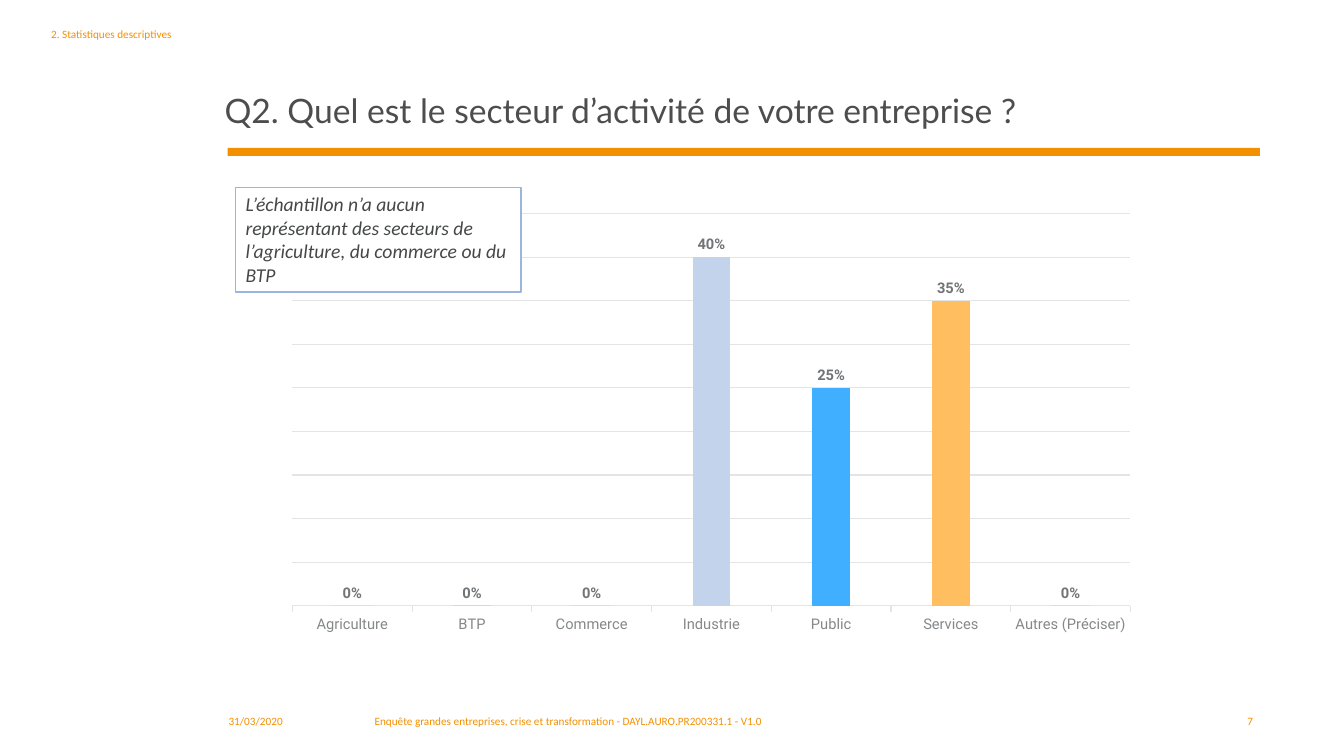
from pptx import Presentation
from pptx.chart.data import CategoryChartData
from pptx.dml.color import RGBColor
from pptx.enum.chart import XL_CHART_TYPE, XL_LABEL_POSITION, XL_TICK_LABEL_POSITION, XL_TICK_MARK
from pptx.enum.shapes import MSO_SHAPE
from pptx.enum.text import MSO_ANCHOR, PP_ALIGN
from pptx.util import Cm, Pt

ORANGE = RGBColor(0xF3, 0x90, 0x00)
DARK = RGBColor(0x4D, 0x4D, 0x4D)
INK = RGBColor(0x45, 0x47, 0x48)
WHITE = RGBColor(0xFF, 0xFF, 0xFF)
EDGE = RGBColor(0x9B, 0xB5, 0xDF)
GRID = RGBColor(0xE3, 0xE4, 0xE4)
AXIS = RGBColor(0x85, 0x88, 0x8A)
LABEL = RGBColor(0x72, 0x75, 0x77)

# Sector, share and bar colour
SECTORS = [
    ("Agriculture", 0, RGBColor(0x93, 0xCD, 0xDD)),
    ("BTP", 0, RGBColor(0x80, 0x80, 0x80)),
    ("Commerce", 0, RGBColor(0xD9, 0x96, 0x94)),
    ("Industrie", 0.4, RGBColor(0xC3, 0xD3, 0xEC)),
    ("Public", 0.25, RGBColor(0x40, 0xAF, 0xFF)),
    ("Services", 0.35, RGBColor(0xFF, 0xBE, 0x5F)),
    ("Autres (Préciser)", 0, ORANGE),
]

SMALL = {"name": "Calibri", "size": Pt(8), "color": ORANGE}
HEAD = {"name": "Lato", "size": Pt(24), "color": DARK}
NOTE = {"name": "Calibri", "size": Pt(14), "italic": True, "color": INK}
BASE = {"name": "Roboto", "size": Pt(10), "color": INK}
TICK = {"name": "Roboto", "size": Pt(10.5), "color": AXIS}
VALUE = {"name": "Roboto", "size": Pt(10.5), "bold": True, "color": LABEL}


def style(font, look):
    for key, val in look.items():
        if key == "color":
            font.color.rgb = val
        else:
            setattr(font, key, val)


def write(shape, text, look, align=PP_ALIGN.LEFT, anchor=MSO_ANCHOR.TOP):
    frame = shape.text_frame
    frame.word_wrap = True
    frame.vertical_anchor = anchor
    para = frame.paragraphs[0]
    para.alignment = align
    run = para.add_run()
    run.text = text
    style(run.font, look)
    return para


def add_text(slide, box, text, look, **place):
    shape = slide.shapes.add_textbox(*map(Cm, box))
    return write(shape, text, look, **place)


def add_rect(slide, box, fill):
    rect = slide.shapes.add_shape(MSO_SHAPE.RECTANGLE, *map(Cm, box))
    rect.shadow.inherit = False
    rect.fill.solid()
    rect.fill.fore_color.rgb = fill
    rect.line.fill.background()
    return rect


def add_header(slide, box):
    left, top, width, height = box
    # Section name beside the title
    add_text(slide, (left, top, 4.29, height), "2. Statistiques descriptives", SMALL)
    # Title above its rule
    inset = 4.37
    para = add_text(slide, (left + inset, top, width - inset, 2.87),
                    "Q2. Quel est le secteur d’activité de votre entreprise ?",
                    HEAD, anchor=MSO_ANCHOR.BOTTOM)
    para.line_spacing = 0.9
    add_rect(slide, (left + 4.7, top + 3.17, 26.01, 0.2), ORANGE)


def add_chart(slide, box):
    names, shares, fills = zip(*SECTORS)
    data = CategoryChartData(number_format="0%")
    data.categories = names
    data.add_series("Series 1", shares)
    chart = slide.shapes.add_chart(
        XL_CHART_TYPE.COLUMN_CLUSTERED, *map(Cm, box), data).chart
    chart.has_legend = False
    chart.has_title = False
    style(chart.font, BASE)

    # Axes
    cat = chart.category_axis
    cat.major_tick_mark = XL_TICK_MARK.OUTSIDE
    cat.tick_label_position = XL_TICK_LABEL_POSITION.LOW
    style(cat.tick_labels.font, TICK)
    val = chart.value_axis
    val.visible = False
    val.minimum_scale, val.maximum_scale, val.major_unit = 0, 0.45, 0.05
    val.has_major_gridlines = True
    for line in (cat.format.line, val.major_gridlines.format.line):
        line.color.rgb = GRID
        line.width = Pt(0.75)

    # Bars
    plot = chart.plots[0]
    plot.vary_by_categories = False
    plot.gap_width, plot.overlap = 219, -27
    bars = plot.series[0]
    bars.format.fill.solid()
    bars.format.fill.fore_color.rgb = ORANGE
    for i, color in enumerate(fills):
        fill = bars.points[i].format.fill
        fill.solid()
        fill.fore_color.rgb = color

    # Bar labels
    tags = bars.data_labels
    tags.show_value = True
    tags.position = XL_LABEL_POSITION.OUTSIDE_END
    tags.number_format = "0%"
    tags.number_format_is_linked = False
    style(tags.font, VALUE)


def add_note(slide, box):
    note = add_rect(slide, box, WHITE)
    note.line.color.rgb = EDGE
    note.line.width = Pt(1)
    write(note, "L’échantillon n’a aucun représentant des secteurs de "
                "l’agriculture, du commerce ou du BTP", NOTE)


def add_footer(slide, box):
    left, top, width, height = box
    page = 3.1
    parts = [
        (0, 3.61, "31/03/2020", PP_ALIGN.LEFT),
        (3.68, 13.89, "Enquête grandes entreprises, crise et transformation"
                      " - DAYL.AURO.PR200331.1 - V1.0", PP_ALIGN.LEFT),
        (width - page, page, "7", PP_ALIGN.RIGHT),
    ]
    for shift, wide, text, align in parts:
        add_text(slide, (left + shift, top, wide, height), text, SMALL, align=align)


def main():
    deck = Presentation()
    deck.slide_width, deck.slide_height = Cm(33.87), Cm(19.05)
    slide = deck.slides.add_slide(deck.slide_layouts[6])
    add_header(slide, (1.04, 0.56, 30.71, 3.48))
    add_chart(slide, (6.93, 5.16, 22, 11))
    add_note(slide, (5.94, 4.72, 7.19, 2.64))
    add_footer(slide, (5.51, 17.88, 26.32, 0.91))
    deck.save("out.pptx")


if __name__ == "__main__":
    main()
